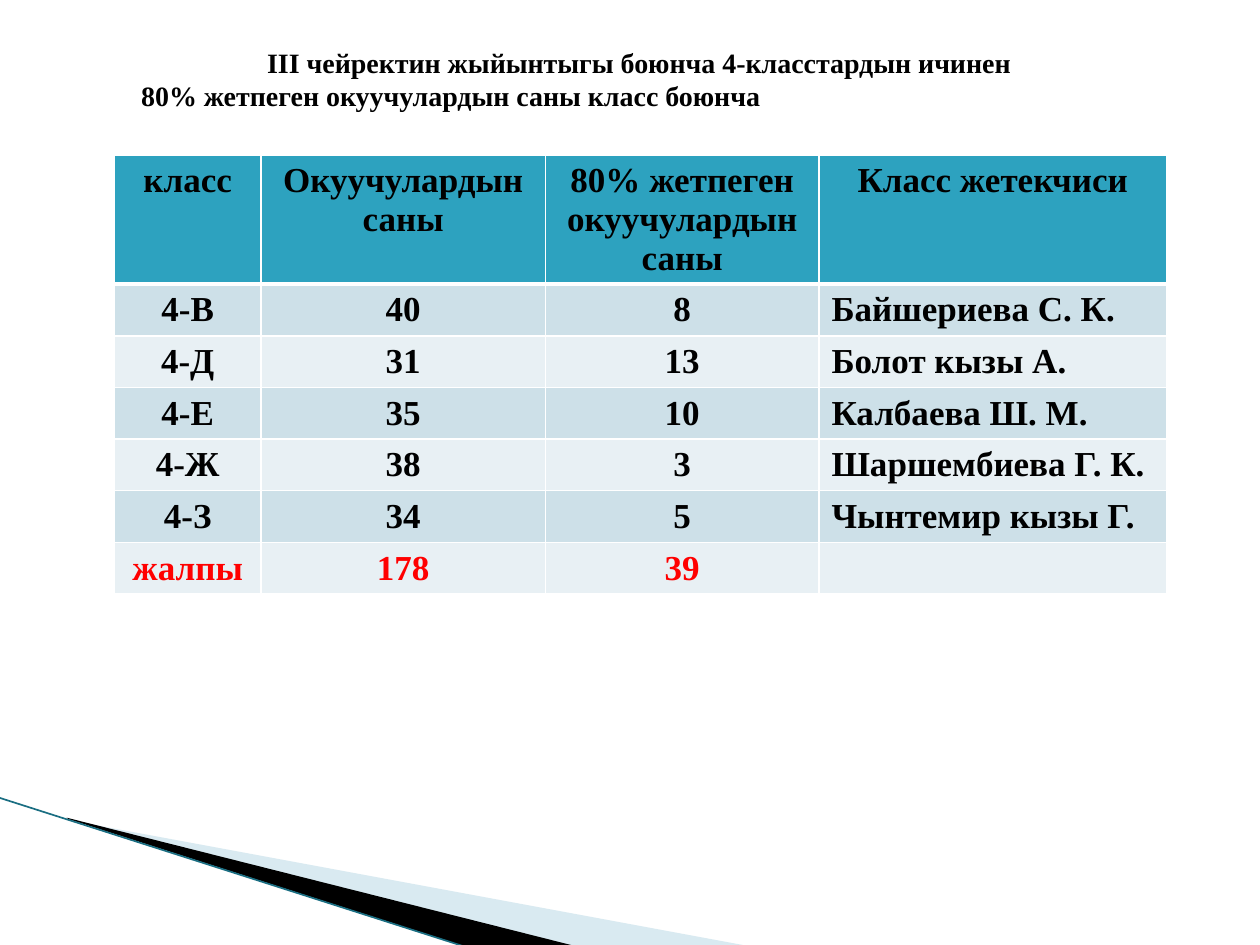
from lxml import etree
from pptx import Presentation
from pptx.dml.color import RGBColor
from pptx.enum.shapes import MSO_CONNECTOR
from pptx.enum.text import MSO_ANCHOR, MSO_AUTO_SIZE, PP_ALIGN
from pptx.oxml import parse_xml
from pptx.oxml.ns import nsdecls, qn
from pptx.util import Inches, Pt

STRAIGHT = MSO_CONNECTOR.STRAIGHT
TOP, MIDDLE = MSO_ANCHOR.TOP, MSO_ANCHOR.MIDDLE
LEFT, CENTER = PP_ALIGN.LEFT, PP_ALIGN.CENTER
NONE = MSO_AUTO_SIZE.NONE
BLACK = RGBColor(0, 0, 0)
RED = RGBColor(255, 0, 0)
TEAL = RGBColor(0x2D, 0xA2, 0xBF)
DARK = RGBColor(0x1A, 0x6E, 0x82)
PALE = RGBColor(0xA0, 0xCB, 0xDC)
BANDS = [RGBColor(0xE8, 0xF0, 0xF4), RGBColor(0xCD, 0xE0, 0xE8)]
FONT = "Times New Roman"


def style(para, size, color, align):
    para.alignment = align
    for run in para.runs:
        run.font.name = FONT
        run.font.size = Pt(size)
        run.font.bold = True
        run.font.color.rgb = color


def wedge(points, color):
    spots = [(Inches(x), Inches(y)) for x, y in points]
    form = slide.shapes.build_freeform(*spots[0])
    form.add_line_segments(spots[1:], close=True)
    shape = form.convert_to_shape()
    shape.shadow.inherit = False
    shape.fill.solid()
    shape.fill.fore_color.rgb = color
    shape.line.fill.background()
    return shape


prs = Presentation()
prs.slide_width, prs.slide_height = Inches(10), Inches(7.5)
slide = prs.slides.add_slide(prs.slide_layouts[5])

light = wedge([(0.55, 6.51), (5.95, 7.51), (4.56, 7.51), (0.55, 6.5)], PALE)
tint = light.fill._xPr.find(".//" + qn("a:srgbClr"))
etree.SubElement(tint, qn("a:alpha"), val="40000")
wedge([(0.53, 6.49), (4.57, 7.51), (3.72, 7.52), (0.54, 6.5)], BLACK)
edge = slide.shapes.add_connector(
    STRAIGHT, Inches(-0.01), Inches(6.33), Inches(3.71), Inches(7.52))
edge.line.color.rgb = DARK
edge.line.width = Pt(0.95)
etree.SubElement(edge._element.spPr, qn("a:effectLst"))

title = slide.shapes.title
title.left, title.top = Inches(1.02), Inches(0.31)
title.width, title.height = Inches(8.36), Inches(0.64)
frame = title.text_frame
frame.text = ("III чейректин жыйынтыгы боюнча 4-класстардын ичинен\n"
              "80% жетпеген окуучулардын саны класс боюнча")
frame.word_wrap = True
frame.auto_size = NONE
frame.vertical_anchor = TOP
for para in frame.paragraphs:
    style(para, 16, BLACK, LEFT)
frame.paragraphs[0]._p.get_or_add_pPr().set("indent", str(Inches(1)))

rows = [
    ("класс", "Окуучулардын саны", "80% жетпеген окуучулардын саны", "Класс жетекчиси"),
    ("4-В", "40", "8", "Байшериева С. К."),
    ("4-Д", "31", "13", "Болот кызы А."),
    ("4-Е", "35", "10", "Калбаева Ш. М."),
    ("4-Ж", "38", "3", "Шаршембиева Г. К."),
    ("4-З", "34", "5", "Чынтемир кызы Г."),
    ("жалпы", "178", "39", ""),
]
widths = [1.16, 2.26, 2.17, 2.76]
last = len(rows) - 1
table = slide.shapes.add_table(
    len(rows), len(widths), Inches(0.91), Inches(1.23),
    Inches(8.35), Inches(3.48)).table
for col, width in zip(table.columns, widths):
    col.width = Inches(width)
for r, row in enumerate(rows):
    table.rows[r].height = Inches(0.41 if r else 1.02)
    for c, text in enumerate(row):
        cell = table.cell(r, c)
        cell.text_frame.text = text
        name = r > 0 and c == 3
        cell.vertical_anchor = TOP if r == 0 or name else MIDDLE
        style(cell.text_frame.paragraphs[0], 20,
              RED if r == last else BLACK, LEFT if name else CENTER)
        props = cell._tc.get_or_add_tcPr()
        for side in "LRTB":
            thick = (r, side) in [(0, "B"), (1, "T")]
            props.append(parse_xml(
                f'<a:ln{side} {nsdecls("a")} w="{Pt(3 if thick else 1)}"><a:solidFill>'
                f'<a:srgbClr val="FFFFFF"/></a:solidFill></a:ln{side}>'))
        cell.fill.solid()
        cell.fill.fore_color.rgb = BANDS[r % 2] if r else TEAL

prs.save("out.pptx")
